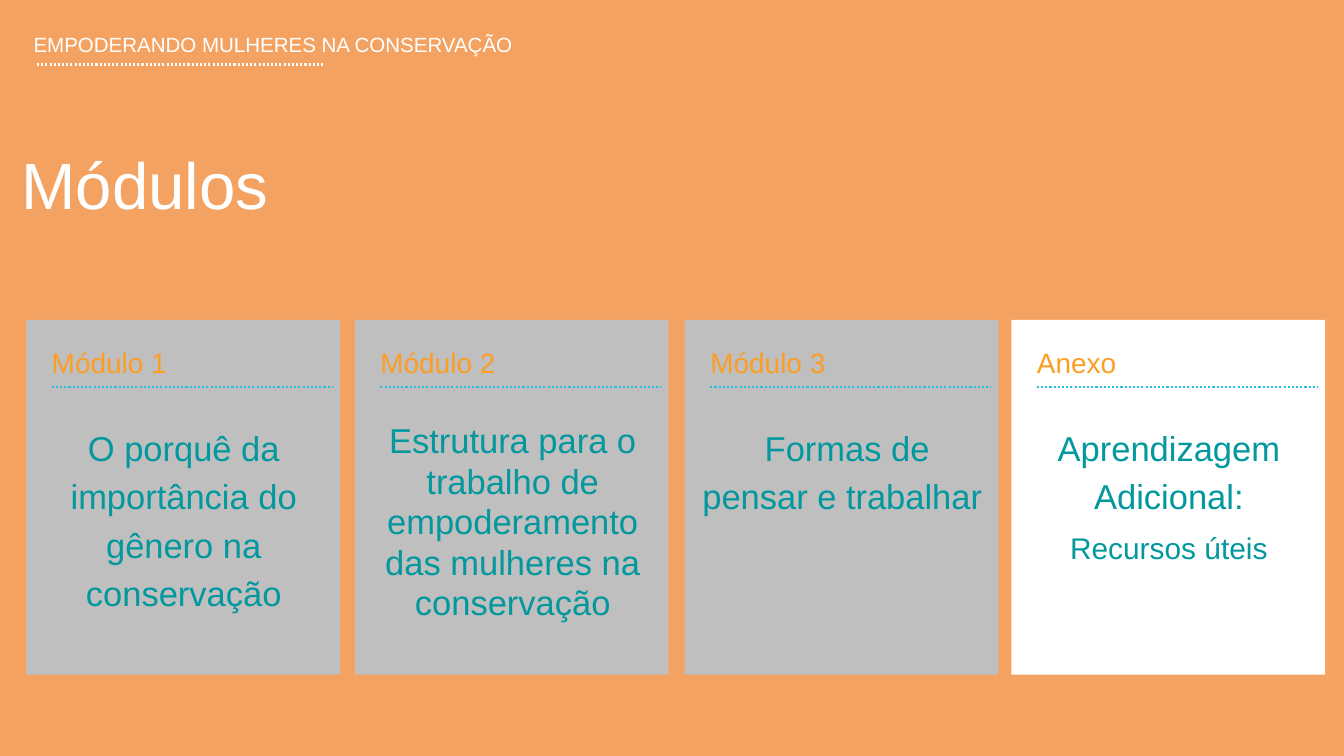
from dataclasses import dataclass

from lxml import etree
from pptx import Presentation
from pptx.dml.color import RGBColor
from pptx.enum.dml import MSO_LINE
from pptx.enum.shapes import MSO_CONNECTOR, MSO_SHAPE
from pptx.enum.text import PP_ALIGN
from pptx.oxml.ns import qn
from pptx.slide import Slide
from pptx.util import Inches, Pt

LEFT, CENTER = PP_ALIGN.LEFT, PP_ALIGN.CENTER
STRAIGHT, RECT = MSO_CONNECTOR.STRAIGHT, MSO_SHAPE.RECTANGLE
DOTS = MSO_LINE.ROUND_DOT


@dataclass(frozen=True)
class Theme:
    font: str = "Arial"
    back: str = "F4A261"
    white: str = "FFFFFF"
    gray: str = "BFBFBF"
    label: str = "FD9D24"
    teal: str = "03989E"
    rule: str = "26BDE2"
    title_size: float = 70
    head_size: float = 22
    label_size: float = 30
    body_size: float = 37
    note_size: float = 32
    rule_width: float = 2.25


THEME = Theme()


@dataclass(frozen=True)
class Line:
    text: str
    size: float
    color: str
    lead: float
    align: PP_ALIGN = LEFT


@dataclass(frozen=True)
class Card:
    left: float
    label: str
    body: tuple[str, ...]
    fill: str = THEME.gray
    lead: float = 51.8
    inset: float = 0.26
    width: float = 4.17


TOP, WIDTH, HEIGHT = 4.76, 4.67, 5.28
INDENT, SPAN = 0.38, 4.17

CARDS = (
    Card(0.39, "Módulo 1", ("O porquê da importância do gênero na conservação",)),
    Card(5.28, "Módulo 2",
         ("Estrutura para o trabalho de empoderamento das mulheres na conservação",),
         lead=43.4, inset=0.04, width=4.62),
    Card(10.19, "Módulo 3", (" Formas de pensar e trabalhar",)),
    Card(15.05, "Anexo", ("Aprendizagem Adicional:", "Recursos úteis"),
         fill=THEME.white),
)


def add_text(slide: Slide, left: float, top: float, width: float,
             height: float, lines: list[Line]) -> None:
    box = slide.shapes.add_textbox(
        Inches(left), Inches(top), Inches(width), Inches(height))
    frame = box.text_frame
    frame.word_wrap = True
    frame.margin_left = frame.margin_right = Inches(0)
    frame.margin_top = frame.margin_bottom = Inches(0)
    for i, line in enumerate(lines):
        para = frame.add_paragraph() if i else frame.paragraphs[0]
        para.alignment = line.align
        para.line_spacing = Pt(line.lead)
        run = para.add_run()
        run.text = line.text
        run.font.name = THEME.font
        run.font.size = Pt(line.size)
        run.font.color.rgb = RGBColor.from_string(line.color)


def add_rule(slide: Slide, left: float, top: float, width: float,
             color: str) -> None:
    """Draw a level dotted line."""
    rule = slide.shapes.add_connector(
        STRAIGHT, Inches(left), Inches(top), Inches(left + width), Inches(top))
    rule.line.color.rgb = RGBColor.from_string(color)
    rule.line.width = Pt(THEME.rule_width)
    rule.line.dash_style = DOTS
    etree.SubElement(rule._element.spPr, qn("a:effectLst"))


def add_card(slide: Slide, card: Card) -> None:
    panel = slide.shapes.add_shape(
        RECT, Inches(card.left), Inches(TOP), Inches(WIDTH), Inches(HEIGHT))
    panel.shadow.inherit = False
    panel.fill.solid()
    panel.fill.fore_color.rgb = RGBColor.from_string(card.fill)
    panel.line.fill.background()

    left = card.left + INDENT
    add_rule(slide, left, TOP + 1, SPAN, THEME.rule)
    add_text(slide, left, TOP + 0.3, SPAN, 0.57,
             [Line(card.label, THEME.label_size, THEME.label, 42)])
    sizes = (THEME.body_size, THEME.note_size)
    add_text(slide, card.left + card.inset, TOP + 1.49, card.width, 2.9,
             [Line(text, size, THEME.teal, card.lead, CENTER)
              for text, size in zip(card.body, sizes)])


def main() -> None:
    deck = Presentation()
    deck.slide_width, deck.slide_height = Inches(20), Inches(11.25)
    slide = deck.slides.add_slide(deck.slide_layouts[6])
    slide.background.fill.solid()
    slide.background.fill.fore_color.rgb = RGBColor.from_string(THEME.back)

    for card in CARDS:
        add_card(slide, card)
    add_text(slide, 0.32, 2.14, 10.64, 1.17,
             [Line("Módulos", THEME.title_size, THEME.white, 84)])
    add_text(slide, 0.5, 0.48, 10.64, 0.37,
             [Line("EMPODERANDO MULHERES NA CONSERVAÇÃO",
                   THEME.head_size, THEME.white, 26.4)])
    add_rule(slide, 0.55, 0.96, 4.28, THEME.white)
    deck.save("out.pptx")


if __name__ == "__main__":
    main()
